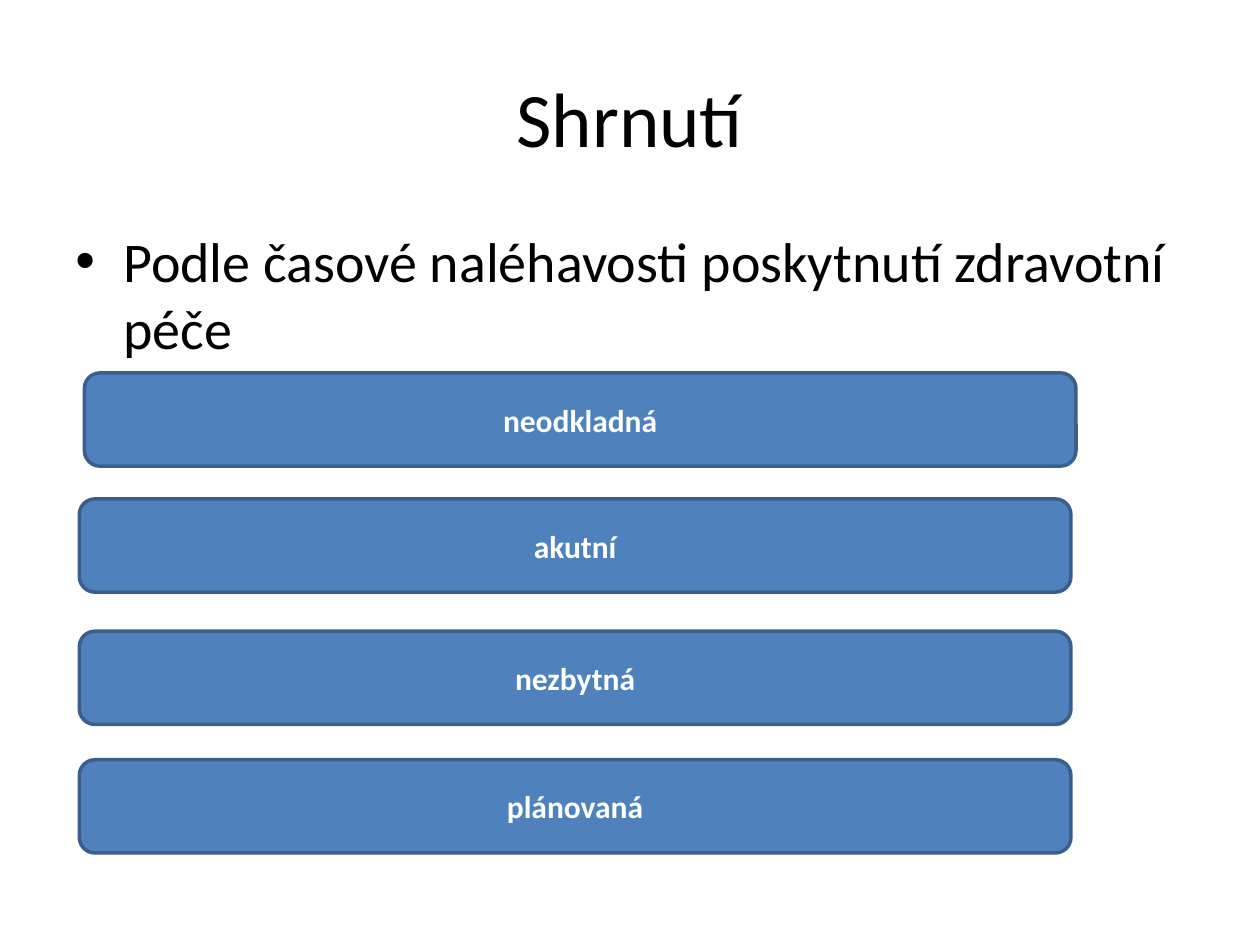
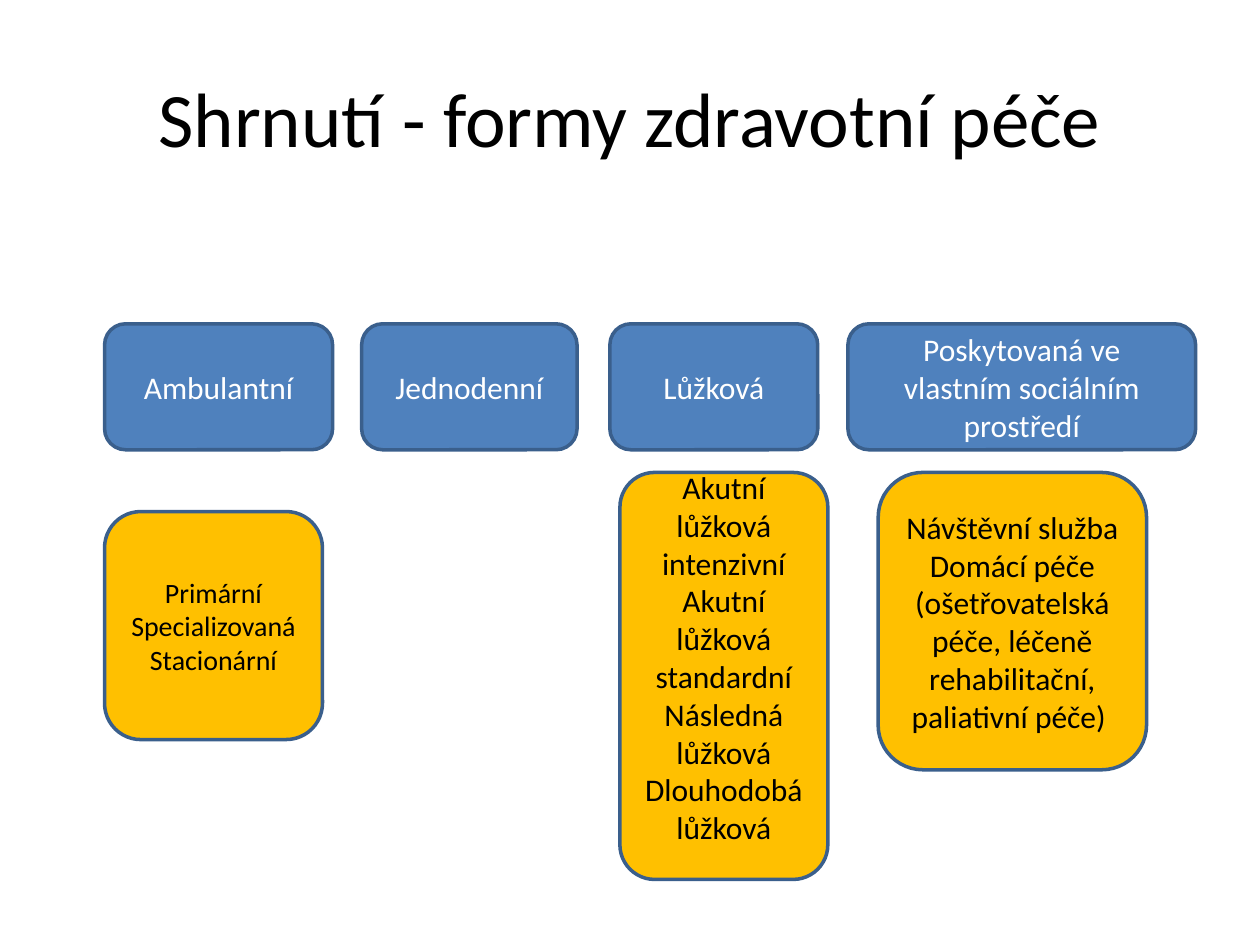
from lxml import etree
from pptx import Presentation
from pptx import util as u
from pptx.dml.color import RGBColor
from pptx.enum import shapes, text
from pptx.oxml.ns import qn

HUES = {
    "blue": "4F81BD",
    "edge": "3A5F8C",
    "gold": "FFC000",
    "ink": "000000",
    "pale": "FFFFFF",
}
FONT = "Calibri"
COLS, ROWS = 100, 75


def hue(name):
    return RGBColor.from_string(HUES[name])


class Deck:
    """Holds the style and the slide being filled; lengths are grid columns and rows."""

    def __init__(self):
        self.prs = Presentation()
        self.prs.slide_width = u.Inches(10)
        self.prs.slide_height = u.Inches(7.5)
        self.col = self.prs.slide_width / COLS
        self.row = self.prs.slide_height / ROWS

    def area(self, x, y, w, h):
        return (round(x * self.col), round(y * self.row),
                round(w * self.col), round(h * self.row))

    def label(self, frame, lines, size, ink, bold=False,
              align=text.PP_ALIGN.CENTER, anchor=text.MSO_ANCHOR.MIDDLE):
        frame.word_wrap = True
        frame.vertical_anchor = anchor
        for i, line in enumerate(lines):
            para = frame.add_paragraph() if i else frame.paragraphs[0]
            para.text = line
            para.alignment = align
            font = para.font
            font.name, font.size, font.bold = FONT, u.Pt(size), bold
            font.color.rgb = hue(ink)

    def page(self, title):
        """Start a slide with its title."""
        self.slide = self.prs.slides.add_slide(self.prs.slide_layouts[6])
        box = self.slide.shapes.add_textbox(*self.area(5, 3, 90, 12.5))
        self.label(box.text_frame, [title], 44, "ink")

    def point(self, line):
        """Add the bulleted lead text below the title."""
        box = self.slide.shapes.add_textbox(*self.area(5, 17.5, 90, 49.5))
        frame = box.text_frame
        self.label(frame, [line], 32, "ink", align=text.PP_ALIGN.LEFT,
                   anchor=text.MSO_ANCHOR.TOP)
        props = frame.paragraphs[0]._p.get_or_add_pPr()
        indent = u.Inches(0.38)
        props.set("marL", str(indent))
        props.set("indent", str(-indent))
        etree.SubElement(props, qn("a:buFont")).set("typeface", "Arial")
        etree.SubElement(props, qn("a:buChar")).set("char", "•")
        # Schema order: bullets come before the default run properties.
        props.append(props.find(qn("a:defRPr")))

    def card(self, area, lines, fill="blue", ink="pale", size=18, bold=False, foot=0):
        """Add a rounded box; foot is extra room, in rows, under the text."""
        card = self.slide.shapes.add_shape(
            shapes.MSO_SHAPE.ROUNDED_RECTANGLE, *self.area(*area))
        card.shadow.inherit = False
        card.fill.solid()
        card.fill.fore_color.rgb = hue(fill)
        card.line.color.rgb = hue("edge")
        card.line.width = u.Pt(2)
        frame = card.text_frame
        frame.margin_bottom = u.Inches(0.05) + round(foot * self.row)
        self.label(frame, lines, size, ink, bold)


def urgency(deck):
    deck.page("Shrnutí")
    deck.point("Podle časové naléhavosti poskytnutí zdravotní péče")
    bars = [
        (6.7, 29.6, "neodkladná"),
        (6.3, 39.6, "akutní"),
        (6.3, 50.1, "nezbytná"),
        (6.3, 60.3, "plánovaná"),
    ]
    for x, y, name in bars:
        deck.card((x, y, 78.7, 7.4), [name], bold=True)


def forms(deck):
    deck.page("Shrnutí - formy zdravotní péče")
    heads = [
        (8.3, 18.1, "Ambulantní"),
        (28.7, 17.1, "Jednodenní"),
        (48.4, 16.5, "Lůžková"),
        (67.3, 27.6, "Poskytovaná ve vlastním sociálním prostředí"),
    ]
    for x, w, name in heads:
        deck.card((x, 25.7, w, 10), [name])

    kinds = [
        ((8.3, 40.6, 17.3, 18.1), 16, 0,
         ["Primární", "Specializovaná", "Stacionární"]),
        ((49.2, 37.5, 16.5, 32.3), 18, 3,
         ["Akutní lůžková intenzivní", "Akutní lůžková standardní",
          "Následná lůžková", "Dlouhodobá lůžková"]),
        ((69.7, 37.5, 21.3, 23.6), 18, 0,
         ["Návštěvní služba",
          "Domácí péče (ošetřovatelská péče, léčeně rehabilitační, paliativní péče) "]),
    ]
    for area, size, foot, lines in kinds:
        deck.card(area, lines, "gold", "ink", size, foot=foot)


def main():
    deck = Deck()
    urgency(deck)
    forms(deck)
    deck.prs.save("out.pptx")


if __name__ == "__main__":
    main()
